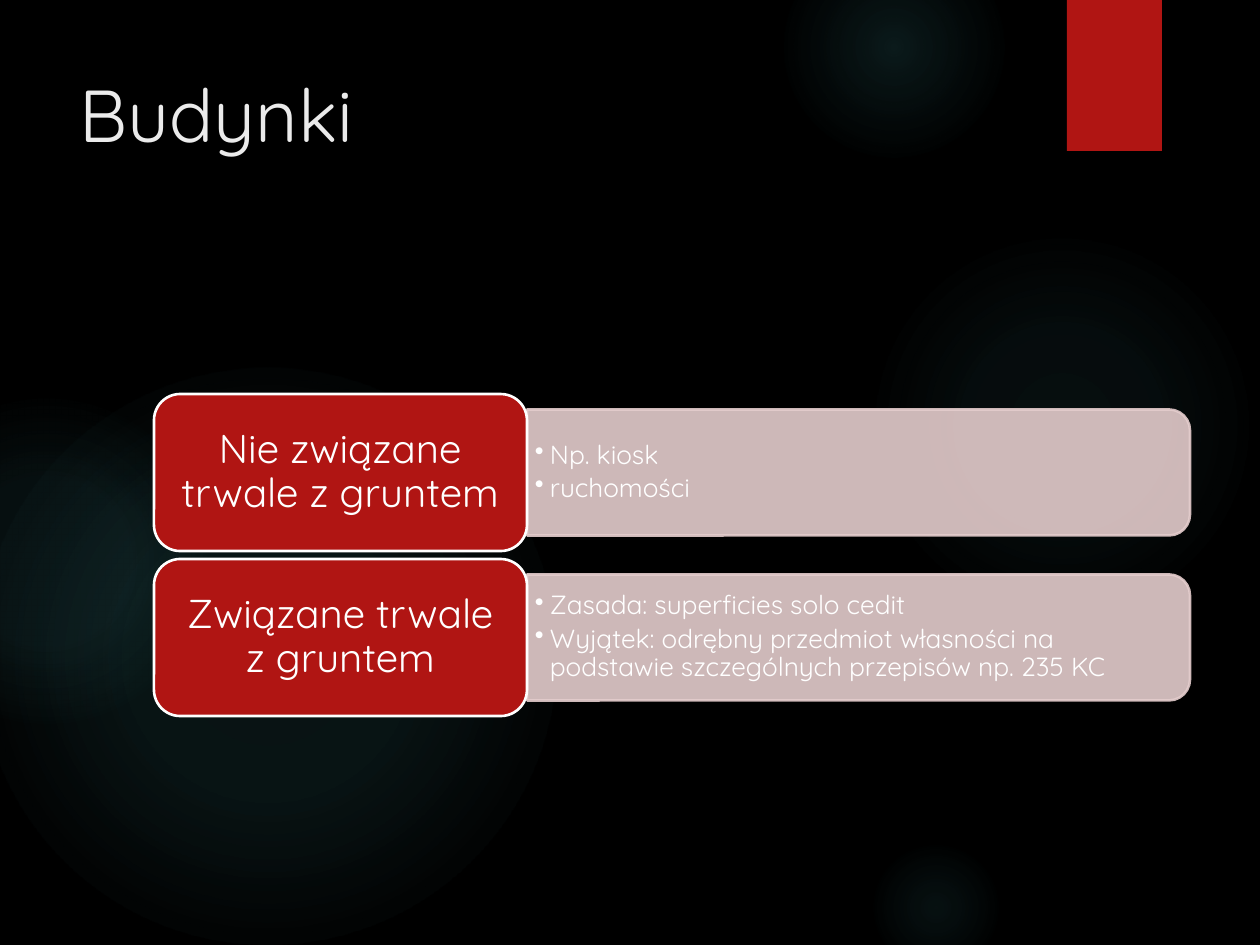
from dataclasses import dataclass

from lxml import etree
from pptx import Presentation
from pptx import util as u
from pptx.dml.color import RGBColor
from pptx.enum import shapes, text
from pptx.oxml import ns

SCALE = 914400 / 126
FONT = "Quicksand"
RED, PINK, WHITE, GLOW = "B01513", "E4CCCC", "FFFFFF", "50B9C1"
ROW_TOP, ROW_PITCH = 394, 165
LABEL_LEFT, LABEL_WIDTH, LABEL_HEIGHT = 154, 373, 157
BAR_WIDTH, BAR_HEIGHT = 663, 126


@dataclass
class Glow:
    left: int
    top: int
    size: int
    stops: list[tuple[int, int]]


@dataclass
class Row:
    label: str
    points: list[str]


GLOWS = [
    Glow(868, 231, 388, [(0, 7), (36, 6), (69, 0)]),
    Glow(784, -63, 220, [(0, 14), (36, 7), (73, 0)]),
    Glow(868, 840, 136, [(0, 9), (36, 5), (66, 0)]),
    Glow(-21, 368, 577, [(0, 11), (36, 10), (75, 0)]),
    Glow(-116, 399, 325, [(0, 8), (36, 8), (72, 0)]),
]
ROWS = [
    Row("Nie związane trwale z gruntem", ["Np. kiosk", "ruchomości"]),
    Row("Związane trwale z gruntem", [
        "Zasada: superficies solo cedit",
        "Wyjątek: odrębny przedmiot własności na podstawie szczególnych przepisów np. 235 KC",
    ]),
]


def px(value: float) -> int:
    return round(value * SCALE)


def color(value: str) -> RGBColor:
    return RGBColor.from_string(value)


def add_element(parent, tag: str, **attributes):
    return etree.SubElement(parent, ns.qn(tag), **attributes)


def add_shape(page, kind, left, top, width, height, fill: str, line: str | None = None):
    shape = page.shapes.add_shape(kind, px(left), px(top), px(width), px(height))
    shape.shadow.inherit = False
    shape.fill.solid()
    shape.fill.fore_color.rgb = color(fill)
    if line:
        shape.line.color.rgb = color(line)
        shape.line.width = u.Pt(1.5)
    else:
        shape.line.fill.background()
    return shape


def set_frame(frame, side: int, end: int, anchor) -> None:
    frame.word_wrap = True
    frame.margin_left = frame.margin_right = px(side)
    frame.margin_top = frame.margin_bottom = px(end)
    frame.vertical_anchor = anchor


def style_paragraph(para, size: int, ink: str, align, after: float = 0) -> None:
    para.alignment = align
    para.line_spacing = 0.9 if after else 1.0
    para.space_after = u.Pt(after)
    for span in para.runs:
        span.font.name = FONT
        span.font.size = u.Pt(size)
        span.font.color.rgb = color(ink)


def add_bullet(para) -> None:
    properties = para._p.get_or_add_pPr()
    properties.set("marL", str(px(15)))
    properties.set("indent", str(-px(15)))
    add_element(properties, "a:buChar", char="•")


def add_glow(page, glow: Glow) -> None:
    shape = add_shape(page, shapes.MSO_SHAPE.OVAL, glow.left, glow.top, glow.size, glow.size, GLOW)
    solid = shape._element.spPr.find(ns.qn("a:solidFill"))
    gradient = etree.Element(ns.qn("a:gradFill"), rotWithShape="1")
    stop_list = add_element(gradient, "a:gsLst")
    for position, alpha in glow.stops:
        stop = add_element(stop_list, "a:gs", pos=str(position * 1000))
        tint = add_element(stop, "a:srgbClr", val=GLOW)
        add_element(tint, "a:alpha", val=str(alpha * 1000))
    circle = add_element(gradient, "a:path", path="circle")
    add_element(circle, "a:fillToRect", l="50000", t="50000", r="50000", b="50000")
    solid.getparent().replace(solid, gradient)


def add_title(page, title: str) -> None:
    box = page.shapes.add_textbox(px(67), px(63), px(973), px(193))
    set_frame(box.text_frame, 13, 6, text.MSO_ANCHOR.TOP)
    box.text_frame.text = title
    style_paragraph(box.text_frame.paragraphs[0], 42, "EBEBEB", text.PP_ALIGN.LEFT)


def add_row(page, row: Row, top: int) -> None:
    bar_left = LABEL_LEFT + LABEL_WIDTH
    middle = top + LABEL_HEIGHT / 2
    bar = add_shape(page, shapes.MSO_SHAPE.ROUND_2_SAME_RECTANGLE,
                    bar_left + (BAR_WIDTH - BAR_HEIGHT) / 2, middle - BAR_WIDTH / 2,
                    BAR_HEIGHT, BAR_WIDTH, PINK, PINK)
    bar.rotation = 90
    for tint in bar._element.spPr.iter(ns.qn("a:srgbClr")):
        add_element(tint, "a:alpha", val="90000")

    box = page.shapes.add_textbox(px(bar_left), px(middle - 57), px(656), px(114))
    set_frame(box.text_frame, 8, 4, text.MSO_ANCHOR.MIDDLE)
    box.text_frame.text = "\n".join(row.points)
    for para in box.text_frame.paragraphs:
        add_bullet(para)
        style_paragraph(para, 15, WHITE, text.PP_ALIGN.LEFT, 3)

    label = add_shape(page, shapes.MSO_SHAPE.ROUNDED_RECTANGLE,
                      LABEL_LEFT, top, LABEL_WIDTH, LABEL_HEIGHT, RED, WHITE)
    set_frame(label.text_frame, 12, 6, text.MSO_ANCHOR.MIDDLE)
    label.text_frame.text = row.label
    style_paragraph(label.text_frame.paragraphs[0], 23, WHITE, text.PP_ALIGN.CENTER, 8)


def main() -> None:
    deck = Presentation()
    deck.slide_width, deck.slide_height = px(1260), px(945)
    page = deck.slides.add_slide(deck.slide_layouts[6])
    page.background.fill.solid()
    page.background.fill.fore_color.rgb = color("000000")
    for glow in GLOWS:
        add_glow(page, glow)
    add_shape(page, shapes.MSO_SHAPE.RECTANGLE, 1067, 0, 95, 151, RED)
    add_title(page, "Budynki")
    for index, row in enumerate(ROWS):
        add_row(page, row, ROW_TOP + index * ROW_PITCH)
    deck.save("out.pptx")


if __name__ == "__main__":
    main()
